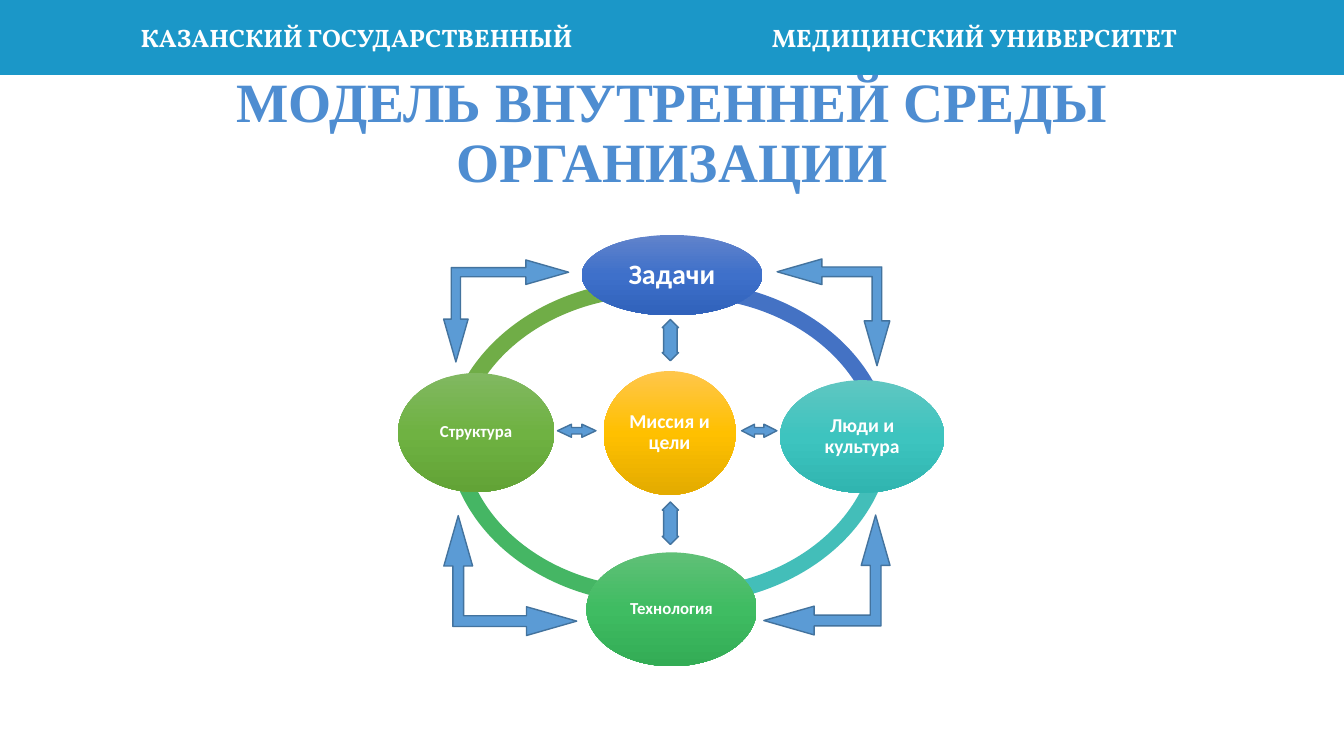
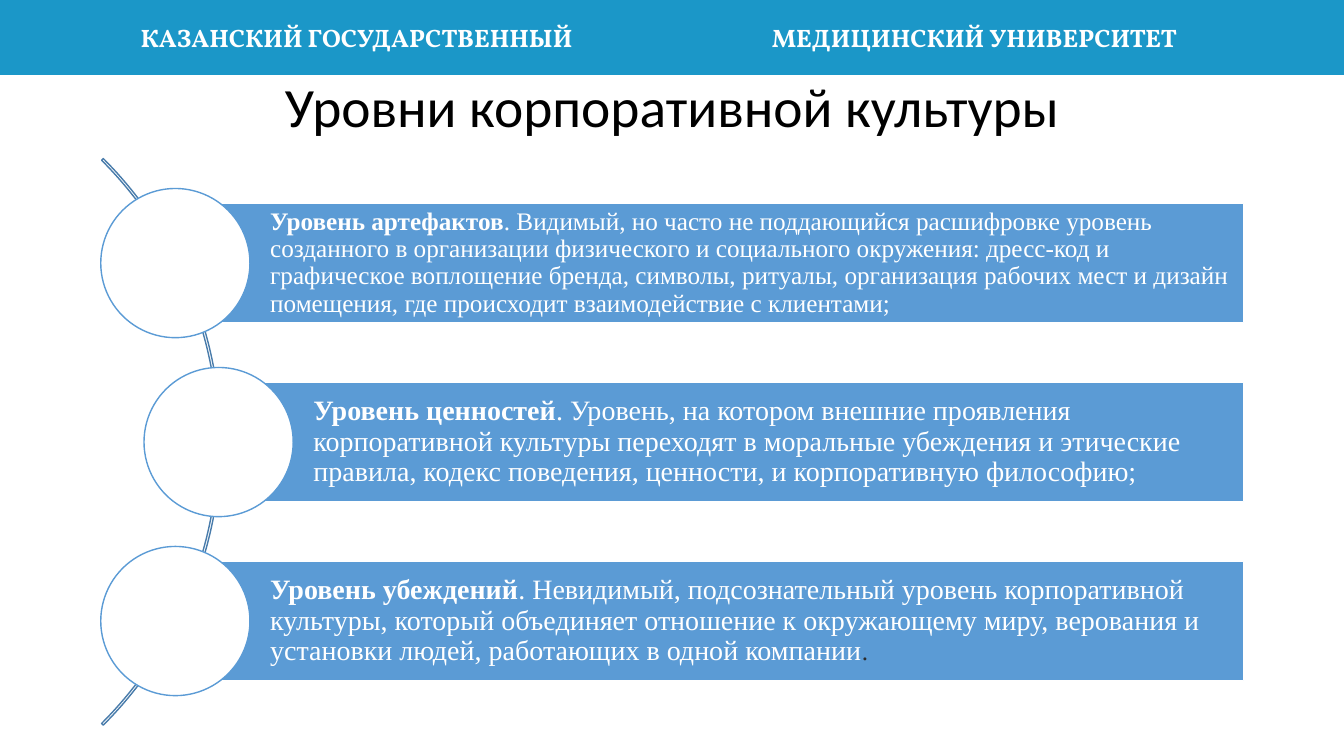
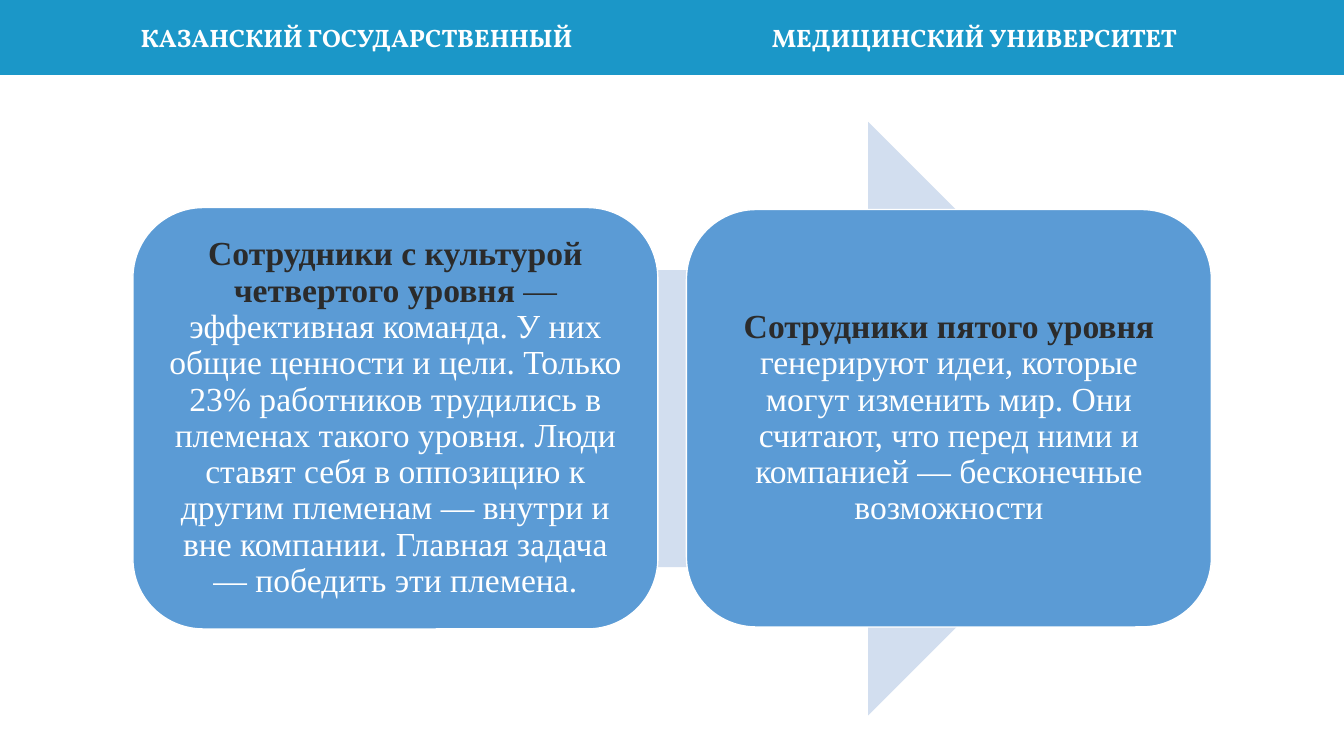
from copy import deepcopy
from pptx import Presentation
from pptx.dml.color import RGBColor
from pptx.enum.shapes import MSO_SHAPE
from pptx.enum.text import MSO_ANCHOR, PP_ALIGN
from pptx.oxml.ns import qn
from pptx.util import Cm, Pt

BLUE, WHITE, BLACK, DARK = "5B9BD5", "FFFFFF", "000000", "2B2B2B"
SERIF, SANS, BRAND = "Times New Roman", "Calibri", "Vollkorn"
rgb = RGBColor.from_string


def add_shape(s, kind, box, fill=None, line=None, adj=(), rot=0):
    sp = s.shapes.add_shape(kind, *[Cm(v) for v in box])
    sp.shadow.inherit = False
    sp.rotation = rot
    for i, v in enumerate(adj):
        sp.adjustments[i] = v
    if fill:
        sp.fill.solid()
        sp.fill.fore_color.rgb = rgb(fill)
    else:
        sp.fill.background()
    if line:
        sp.line.color.rgb = rgb(line)
        sp.line.width = Pt(1)
    else:
        sp.line.fill.background()
    return sp


def write(sp, runs, font, align=PP_ALIGN.CENTER, anchor=MSO_ANCHOR.MIDDLE,
          spacing=0.9, inset=0.13, left=None):
    tf = sp.text_frame
    tf.word_wrap = True
    tf.vertical_anchor = anchor
    tf.margin_top = tf.margin_bottom = tf.margin_right = Cm(inset)
    tf.margin_left = Cm(inset if left is None else left)
    p = tf.paragraphs[0]
    p.alignment = align
    p.line_spacing = spacing
    for text, size, color, bold in runs:
        r = p.add_run()
        r.text = text
        r.font.name = font
        r.font.size = Pt(size)
        r.font.bold = bold
        r.font.color.rgb = rgb(color)


prs = Presentation()
prs.slide_width, prs.slide_height = Cm(33.87), Cm(19.05)
blank = prs.slide_layouts[6]
slides = [prs.slides.add_slide(blank) for _ in range(3)]

s = slides[0]
header = [add_shape(s, MSO_SHAPE.RECTANGLE, (0, 0, 33.87, 1.89), "1B97C8")]
for text, x, align in [("КАЗАНСКИЙ ГОСУДАРСТВЕННЫЙ", 2.34, PP_ALIGN.RIGHT),
                       ("МЕДИЦИНСКИЙ УНИВЕРСИТЕТ", 19.2, PP_ALIGN.LEFT)]:
    sp = s.shapes.add_textbox(Cm(x), Cm(0.43), Cm(12.34), Cm(1.02))
    write(sp, [(text, 18, WHITE, True)], BRAND, align, MSO_ANCHOR.TOP, 1, left=0.25, inset=0.25)
    sp.text_frame.margin_top = sp.text_frame.margin_bottom = Cm(0.13)
    header.append(sp)
for sp in header:
    blank.shapes.element.append(sp.element)

titles = [("МОДЕЛЬ ВНУТРЕННЕЙ СРЕДЫ ОРГАНИЗАЦИИ", 3.02, SERIF, "4E8DD1", True),
          ("Уровни корпоративной культуры", 1.76, SANS, BLACK, False)]
for s, (text, height, font, color, bold) in zip(slides, titles):
    sp = s.shapes.add_textbox(Cm(2.34), Cm(1.88), Cm(29.2), Cm(height))
    write(sp, [(text, 39.6, color, bold)], font)

s = slides[0]
arcs = [(11.2, 7.06, "70AD47", 112.35, 165.32),
        (11.25, 6.43, "45B664", 50.95, 107.57),
        (11.91, 6.43, "43BEB9", 1.31, 56.03),
        (11.94, 7.09, "4472C4", 159.8, 212.38)]
for x, y, color, start, end in arcs:
    add_shape(s, MSO_SHAPE.BLOCK_ARC, (x, y, 10.57, 8.79), color, adj=(start, end, 0.046))

ovals = [("Миссия и цели", 14, (15.21, 9.35, 3.33, 3.12), ("FFC64B", "FFC000", "E3AB00")),
         ("Задачи", 20, (14.66, 5.92, 4.55, 2.03), ("6183CB", "3E70CA", "3062BB")),
         ("Люди и культура", 14, (19.66, 9.58, 4.14, 2.84), ("60C6C1", "3DC4BF", "30B5B0")),
         ("Технология", 12, (14.78, 13.92, 4.29, 2.87), ("60C077", "3FBC62", "33AC55")),
         ("Структура", 12, (10.03, 9.4, 3.94, 3), ("81B861", "6FB242", "62A336"))]
for text, size, box, colors in ovals:
    sp = add_shape(s, MSO_SHAPE.OVAL, box)
    sp.fill.gradient()
    sp.fill.gradient_angle = 270
    stops = sp.element.spPr.find(qn("a:gradFill")).find(qn("a:gsLst"))
    stops.append(deepcopy(stops[0]))
    for stop, position, color in zip(sp.fill.gradient_stops, (0, 0.5, 1), colors):
        stop.position = position
        stop.color.rgb = rgb(color)
    write(sp, [(text, size, WHITE, True)], SANS, inset=0.05)

CORNER, ACROSS, UPRIGHT = MSO_SHAPE.LEFT_UP_ARROW, MSO_SHAPE.LEFT_RIGHT_ARROW, MSO_SHAPE.UP_DOWN_ARROW
bend = (0.09, 0.12, 0.42)
arrows = [(CORNER, (19.66, 6.45, 2.69, 2.84), bend, 270),
          (CORNER, (11.18, 6.55, 3.15, 2.57), bend, 180),
          (CORNER, (19.25, 12.98, 3.18, 3.02), bend, 0),
          (CORNER, (11.35, 12.83, 3.02, 3.35), bend, 90),
          (ACROSS, (14.05, 10.69, 0.97, 0.33), (0.5, 1.07), 0),
          (ACROSS, (18.69, 10.69, 0.89, 0.33), (0.5, 0.99), 0),
          (UPRIGHT, (16.69, 8.05, 0.41, 1.04), (0.37, 0.83), 0),
          (UPRIGHT, (16.69, 12.65, 0.41, 1.07), (0.5, 0.83), 0)]
for kind, box, adj, rot in arrows:
    add_shape(s, kind, box, BLUE, "43739E", adj, rot)

s = slides[1]
add_shape(s, MSO_SHAPE.BLOCK_ARC, (-14.63, 1.04, 20.19, 20.19), line="497CAB", adj=(189, 27, 0.003))
levels = [
    (4.42, [("Уровень артефактов", 18, WHITE, True),
            (". Видимый, но часто не поддающийся расшифровке уровень созданного в организации "
             "физического и социального окружения: дресс-код и графическое воплощение бренда, "
             "символы, ритуалы, организация рабочих мест и дизайн помещения, где происходит "
             "взаимодействие с клиентами;", 18, WHITE, False)]),
    (5.51, [("Уровень ценностей", 20, WHITE, True),
            (". Уровень, на котором внешние проявления корпоративной культуры переходят в "
             "моральные убеждения и этические правила, кодекс поведения, ценности, и "
             "корпоративную философию;", 20, WHITE, False)]),
    (4.42, [("Уровень убеждений", 20, WHITE, True),
            (". Невидимый, подсознательный уровень корпоративной культуры, который объединяет "
             "отношение к окружающему миру, верования и установки людей, работающих в одной "
             "компании", 20, WHITE, False),
            (".", 18, DARK, False)])]
bar_height, radius = 3, 1.88
for i, (x, runs) in enumerate(levels):
    middle = 6.63 + 4.51 * i
    sp = add_shape(s, MSO_SHAPE.RECTANGLE, (x, middle - bar_height / 2, 31.34 - x, bar_height), BLUE, WHITE)
    write(sp, runs, SERIF, PP_ALIGN.LEFT, left=2.39)
    add_shape(s, MSO_SHAPE.OVAL, (x - radius, middle - radius, 2 * radius, 2 * radius), WHITE, BLUE)

s = slides[2]
add_shape(s, MSO_SHAPE.RIGHT_ARROW, (4.52, 3.07, 24.84, 14.96), "D2DEEF")
cards = [
    ((3.35, 5.23, 13.23, 10.62),
     [("Сотрудники с культурой четвертого уровня", 24, DARK, True),
      (" — ", 24, DARK, False),
      ("эффективная команда. У них общие ценности и цели. Только 23% работников трудились "
       "в племенах такого уровня. Люди ставят себя в оппозицию к другим племенам — внутри "
       "и вне компании. Главная задача — победить эти племена.", 24, WHITE, False)]),
    ((17.3, 5.28, 13.23, 10.52),
     [("Сотрудники пятого уровня ", 24, DARK, True),
      ("генерируют идеи, которые могут изменить мир. Они считают, что перед ними и "
       "компанией — бесконечные возможности", 24, WHITE, False)])]
for box, runs in cards:
    sp = add_shape(s, MSO_SHAPE.ROUNDED_RECTANGLE, box, BLUE, WHITE)
    write(sp, runs, SERIF, inset=0.24)

prs.save("out.pptx")
